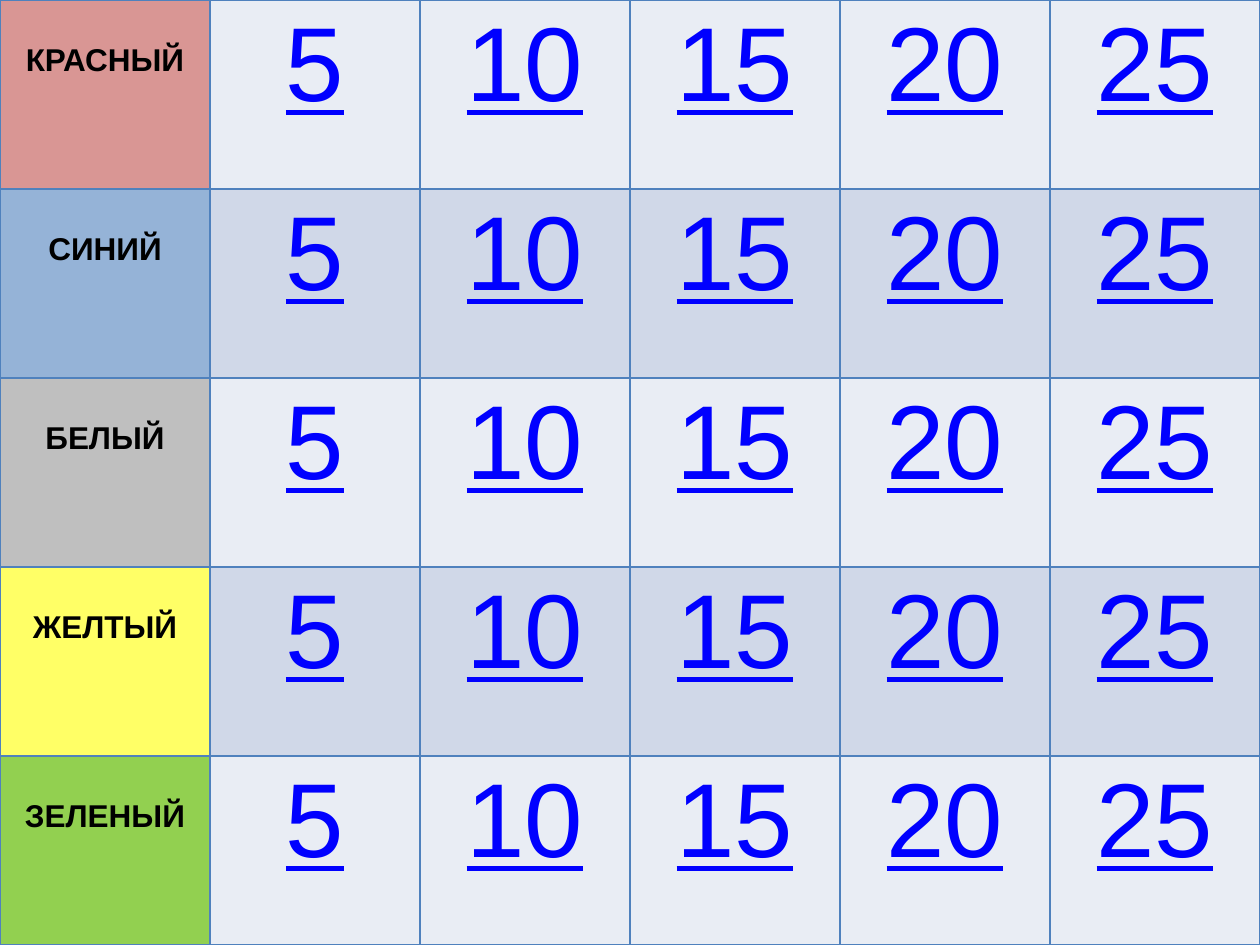
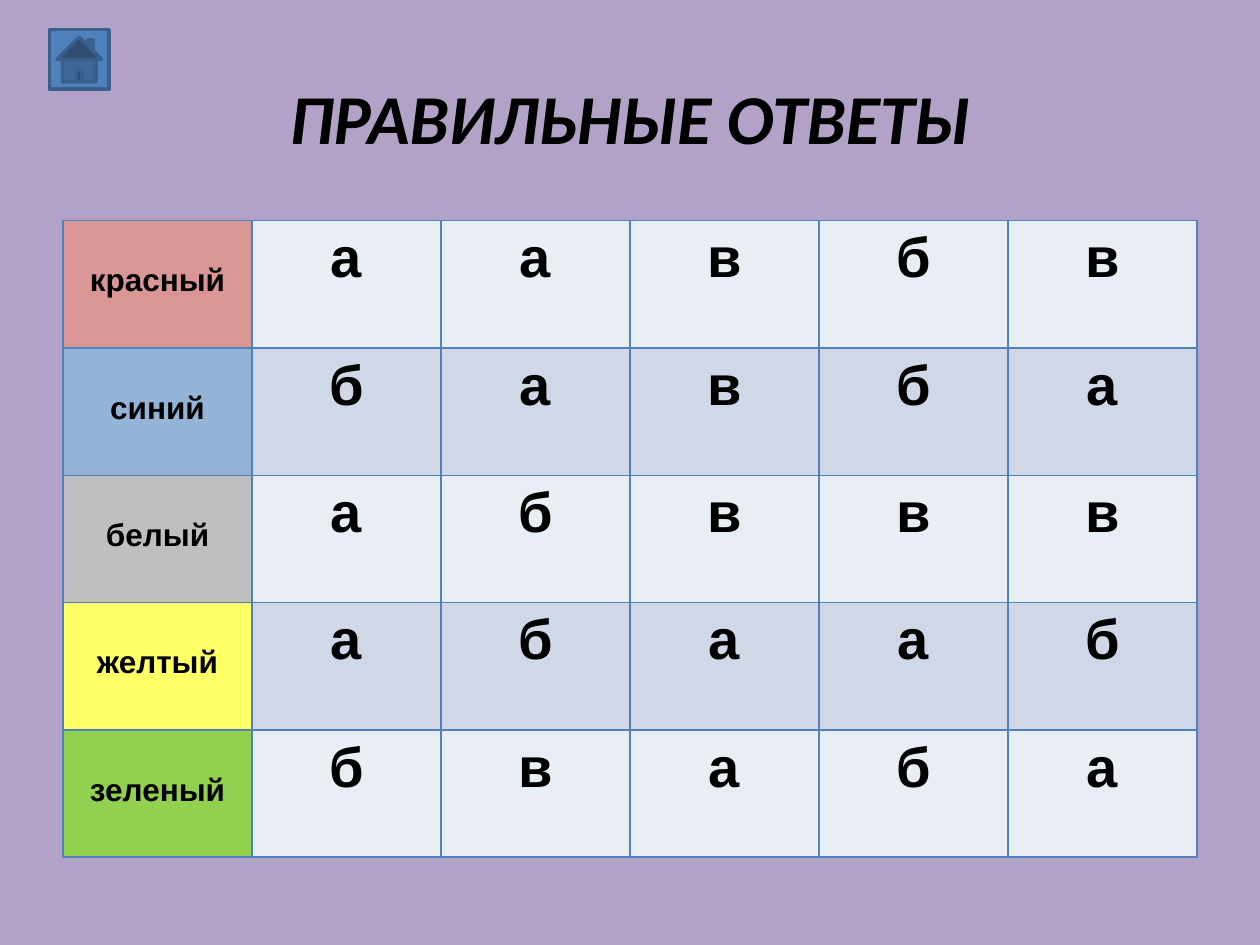
from dataclasses import dataclass
from lxml.etree import SubElement
from pptx import Presentation
from pptx.dml.color import RGBColor
from pptx.enum.shapes import MSO_SHAPE
from pptx.enum.text import MSO_ANCHOR, PP_ALIGN
from pptx.oxml.ns import qn
from pptx.util import Cm, Pt


@dataclass(frozen=True)
class Theme:
    font: str = "Arial"
    title_font: str = "Calibri"
    ink: str = "000000"
    link: str = "0000FF"
    accent: str = "4F81BD"
    accent_dark: str = "3A5F8C"
    lilac: str = "B3A2C7"
    white: str = "FFFFFF"
    bands: tuple = ("E9EDF4", "D0D8E8")
    labels: tuple = ("D99694", "95B3D7", "BFBFBF", "FFFF66", "92D050")
    label_size: int = 18
    answer_size: int = 32
    title_size: int = 40
    points_size: int = 60


T = Theme()
LABEL = dict(name=T.font, size=Pt(T.label_size), bold=True)
POINTS = dict(name=T.font, size=Pt(T.points_size), bold=False, underline=True)
ANSWER = dict(name=T.font, size=Pt(T.answer_size), bold=True)
TITLE = dict(name=T.title_font, size=Pt(T.title_size), bold=True, italic=True)

COLOURS = ["красный", "синий", "белый", "желтый", "зеленый"]
ANSWERS = ["аавбв", "бавба", "абввв", "абааб", "бваба"]
SCORES = ["5", "10", "15", "20", "25"]


def write(tf, text, fmt, colour):
    p = tf.paragraphs[0]
    p.alignment = PP_ALIGN.CENTER
    r = p.add_run()
    r.text = text
    for key, value in fmt.items():
        setattr(r.font, key, value)
    r.font.color.rgb = RGBColor.from_string(colour)


def add_grid(s, box, rows, fmt, colour):
    tbl = s.shapes.add_table(len(rows), len(rows[0]), *map(Cm, box)).table
    tbl.first_row = tbl.horz_banding = False
    for i, row in enumerate(rows):
        for j, text in enumerate(row):
            cell = tbl.cell(i, j)
            tcPr = cell._tc.get_or_add_tcPr()
            for side in ("lnL", "lnR", "lnT", "lnB"):
                ln = SubElement(tcPr, qn(f"a:{side}"), w=str(Pt(1)))
                fill = SubElement(ln, qn("a:solidFill"))
                SubElement(fill, qn("a:srgbClr"), val=T.accent)
            cell.fill.solid()
            if j == 0:
                cell.fill.fore_color.rgb = RGBColor.from_string(T.labels[i])
                cell.margin_top = Cm(0.86)
                write(cell.text_frame, text, LABEL, T.ink)
            else:
                cell.fill.fore_color.rgb = RGBColor.from_string(T.bands[i % 2])
                write(cell.text_frame, text, fmt, colour)


prs = Presentation()
prs.slide_width, prs.slide_height = Cm(25.4), Cm(19.05)
slides = []
for colour in (T.white, T.lilac):
    s = prs.slides.add_slide(prs.slide_layouts[6])
    s.background.fill.solid()
    s.background.fill.fore_color.rgb = RGBColor.from_string(colour)
    slides.append(s)
board, key = slides

rows = [[name.upper(), *SCORES] for name in COLOURS]
add_grid(board, (0, 0, 25.4, 19.05), rows, POINTS, T.link)

tf = key.shapes.add_textbox(Cm(1.27), Cm(0.76), Cm(22.86), Cm(3.18)).text_frame
tf.word_wrap = True
tf.vertical_anchor = MSO_ANCHOR.MIDDLE
write(tf, "ПРАВИЛЬНЫЕ ОТВЕТЫ", TITLE, T.ink)

rows = [[name, *letters] for name, letters in zip(COLOURS, ANSWERS)]
add_grid(key, (1.27, 4.45, 22.86, 12.83), rows, ANSWER, T.ink)

sp = key.shapes.add_shape(MSO_SHAPE.ACTION_BUTTON_HOME, Cm(1), Cm(0.6), Cm(1.2), Cm(1.2))
sp.shadow.inherit = False
sp.fill.solid()
sp.fill.fore_color.rgb = RGBColor.from_string(T.accent)
sp.line.color.rgb = RGBColor.from_string(T.accent_dark)
sp.line.width = Pt(2)

prs.save("out.pptx")
